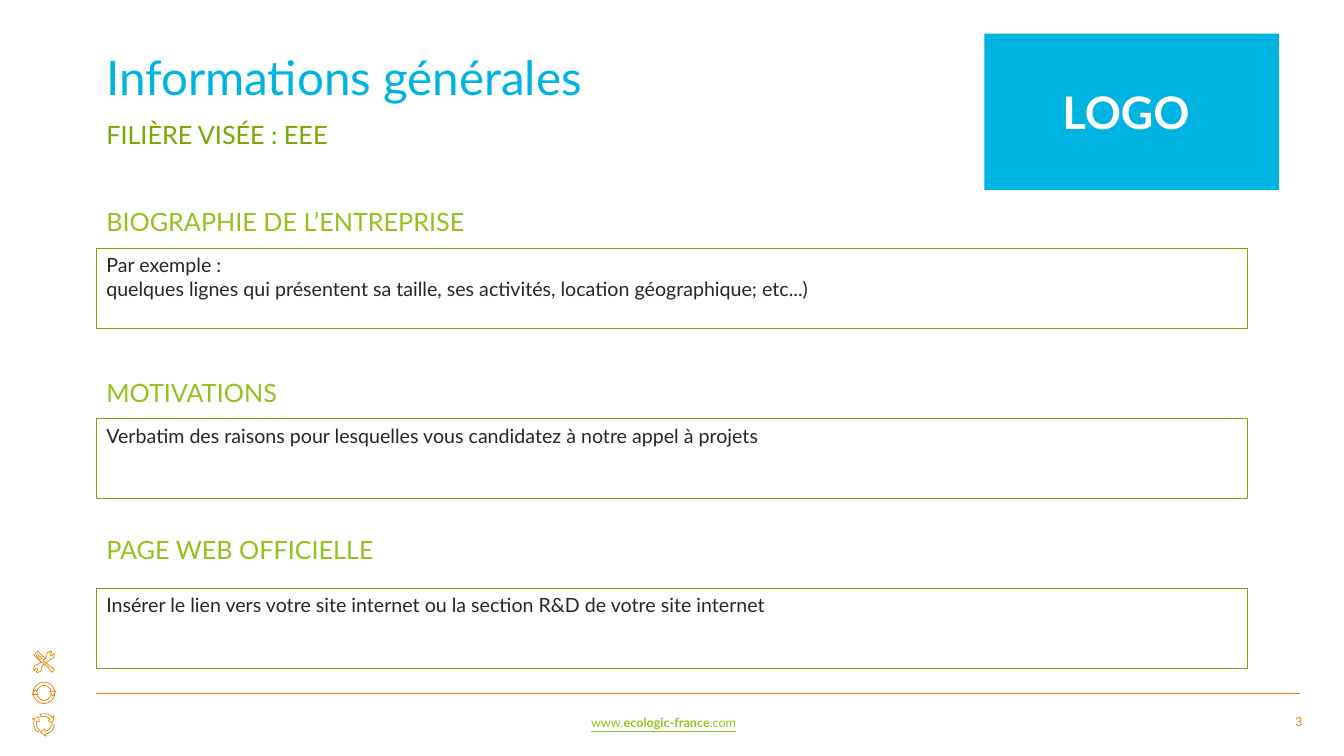
from dataclasses import dataclass
from math import cos, radians, sin

from lxml.etree import SubElement
from pptx import Presentation
from pptx.dml.color import RGBColor
from pptx.enum.shapes import MSO_CONNECTOR, MSO_SHAPE
from pptx.enum.text import MSO_ANCHOR, PP_ALIGN
from pptx.oxml.ns import qn
from pptx.util import Cm, Pt


@dataclass(frozen=True)
class Theme:
    font: str = "Lato"
    blue: str = "00B4E2"
    green: str = "7AA701"
    lime: str = "95C11F"
    orange: str = "EE7F00"
    dark: str = "262626"
    white: str = "FFFFFF"
    title: int = 34
    logo: int = 32
    heading: int = 18
    body: int = 14
    footer: int = 9
    hairline: float = 0.75
    icon_line: float = 0.5


theme = Theme()
rgb = RGBColor.from_string

deck = Presentation()
deck.slide_width, deck.slide_height = Cm(33.87), Cm(19.05)
slide = deck.slides.add_slide(deck.slide_layouts[6])
shapes = slide.shapes


def write(shape, lines, size, color, anchor=MSO_ANCHOR.TOP, align=PP_ALIGN.LEFT, spacing=None):
    """Fill a shape with lines, each a list of (text, extra font settings) runs."""
    frame = shape.text_frame
    frame.word_wrap = True
    frame.vertical_anchor = anchor
    for index, runs in enumerate(lines):
        paragraph = frame.add_paragraph() if index else frame.paragraphs[0]
        paragraph.alignment = align
        if spacing:
            paragraph.line_spacing = spacing
        for text, extra in runs:
            run = paragraph.add_run()
            run.text = text
            run.font.color.rgb = rgb(color)
            for key, value in {"name": theme.font, "size": Pt(size), **extra}.items():
                setattr(run.font, key, value)


def draw_icon_part(center_y, points):
    """Draw a closed orange outline from offsets in cm around an icon's centre."""
    spots = [(Cm(icon_x + x), Cm(center_y + y)) for x, y in points]
    builder = shapes.build_freeform(*spots[0])
    builder.add_line_segments(spots[1:], close=True)
    part = builder.convert_to_shape()
    part.shadow.inherit = False
    part.fill.solid()
    part.fill.fore_color.rgb = rgb(theme.white)
    part.line.color.rgb = rgb(theme.orange)
    part.line.width = Pt(theme.icon_line)


left, width = 2.43, 29.02

# Footer
website = shapes.add_textbox(Cm(14.65), Cm(17.9), Cm(13.31), Cm(0.64))
address = [("www.", {}), ("ecologic-france", {"bold": True}), (".com", {})]
write(website, [[(text, {"underline": True, **extra}) for text, extra in address]],
      theme.footer, theme.lime)
page_number = shapes.add_textbox(Cm(31.44), Cm(17.87), Cm(1.63), Cm(0.66))
write(page_number, [[("3", {})]], theme.footer, theme.orange, align=PP_ALIGN.RIGHT)

# Icons: repair, reuse, recycle
icon_x = 1.11
repair_y, reuse_y, recycle_y = (16.68 + 0.78 * row for row in range(3))

jaw = [(0.03, -0.09), (0.06, -0.14), (0.08, -0.23), (0.16, -0.27), (0.2, -0.25),
       (0.15, -0.2), (0.17, -0.16), (0.2, -0.16), (0.25, -0.22), (0.26, -0.14),
       (0.22, -0.08), (0.14, -0.05)]
screwdriver = [(-0.25, -0.17), (-0.16, -0.27), (0.03, -0.09), (-0.02, -0.04),
               (0.18, 0.14), (0.22, 0.14), (0.26, 0.2), (0.21, 0.26), (0.15, 0.22),
               (0.13, 0.17), (-0.04, 0), (-0.07, 0.01)]
draw_icon_part(repair_y, jaw + [(-x, -y) for x, y in jaw])
draw_icon_part(repair_y, screwdriver)

for radius in (0.27, 0.19):
    ring = shapes.add_shape(MSO_SHAPE.OVAL, Cm(icon_x - radius), Cm(reuse_y - radius),
                            Cm(2 * radius), Cm(2 * radius))
    ring.shadow.inherit = False
    ring.fill.background()
    ring.line.color.rgb = rgb(theme.orange)
    ring.line.width = Pt(theme.icon_line)
for side in (1, -1):
    draw_icon_part(reuse_y, [(0.15 * side, -0.04 * side), (0.3 * side, -0.04 * side),
                             (0.22 * side, 0.08 * side)])

for start in (127, 247, 7):
    arc = range(start, start + 76, 15)
    polar = [(0.26, angle) for angle in arc]
    polar += [(0.32, arc[-1]), (0.22, start + 108), (0.13, arc[-1])]
    polar += [(0.19, angle) for angle in reversed(arc)]
    draw_icon_part(recycle_y, [(r * cos(radians(a)), r * sin(radians(a))) for r, a in polar])

# Footer rule and screwdriver grooves
lines = [
    (left, 17.48, 32.75, 17.48, theme.hairline),
    (icon_x - 0.17, repair_y - 0.2, icon_x - 0.05, repair_y - 0.08, theme.icon_line),
    (icon_x - 0.2, repair_y - 0.17, icon_x - 0.08, repair_y - 0.04, theme.icon_line),
]
for x1, y1, x2, y2, weight in lines:
    line = shapes.add_connector(MSO_CONNECTOR.STRAIGHT, Cm(x1), Cm(y1), Cm(x2), Cm(y2))
    line.line.color.rgb = rgb(theme.orange)
    line.line.width = Pt(weight)
    SubElement(line._element.spPr, qn("a:effectLst"))

# Title and subtitle
title = shapes.add_textbox(Cm(left), Cm(1.24), Cm(width), Cm(1.57))
write(title, [[("Informations générales", {})]], theme.title, theme.blue,
      anchor=MSO_ANCHOR.MIDDLE, spacing=0.9)
sector = shapes.add_textbox(Cm(left), Cm(2.88), Cm(width), Cm(1.02))
write(sector, [[("FILIÈRE VISÉE : EEE", {})]], theme.heading, theme.green)

logo = shapes.add_shape(MSO_SHAPE.RECTANGLE, Cm(24.81), Cm(0.85), Cm(7.42), Cm(3.94))
logo.shadow.inherit = False
logo.fill.solid()
logo.fill.fore_color.rgb = rgb(theme.blue)
logo.line.fill.background()
write(logo, [[("LOGO ", {"bold": True})]], theme.logo, theme.white,
      anchor=MSO_ANCHOR.MIDDLE, align=PP_ALIGN.CENTER)

# Sections: heading, heading top, answer top, answer lines
sections = [
    ("BIOGRAPHIE DE L’ENTREPRISE", 5.08, 6.26,
     ["Par exemple :",
      "quelques lignes qui présentent sa taille, ses activités, location géographique; etc...)"]),
    ("MOTIVATIONS", 9.39, 10.55,
     ["Verbatim des raisons pour lesquelles vous candidatez à notre appel à projets"]),
    ("PAGE WEB OFFICIELLE", 13.34, 14.82,
     ["Insérer le lien vers votre site internet ou la section R&D de votre site internet"]),
]
for heading_text, heading_top, answer_top, answer_lines in sections:
    heading = shapes.add_textbox(Cm(left), Cm(heading_top), Cm(width), Cm(1.02))
    write(heading, [[(heading_text, {})]], theme.heading, theme.lime)
    answer = shapes.add_shape(MSO_SHAPE.RECTANGLE, Cm(left), Cm(answer_top),
                              Cm(width), Cm(2.02))
    answer.shadow.inherit = False
    answer.fill.background()
    answer.line.color.rgb = rgb(theme.green)
    answer.line.width = Pt(theme.hairline)
    write(answer, [[(text, {})] for text in answer_lines], theme.body, theme.dark)

deck.save("out.pptx")
